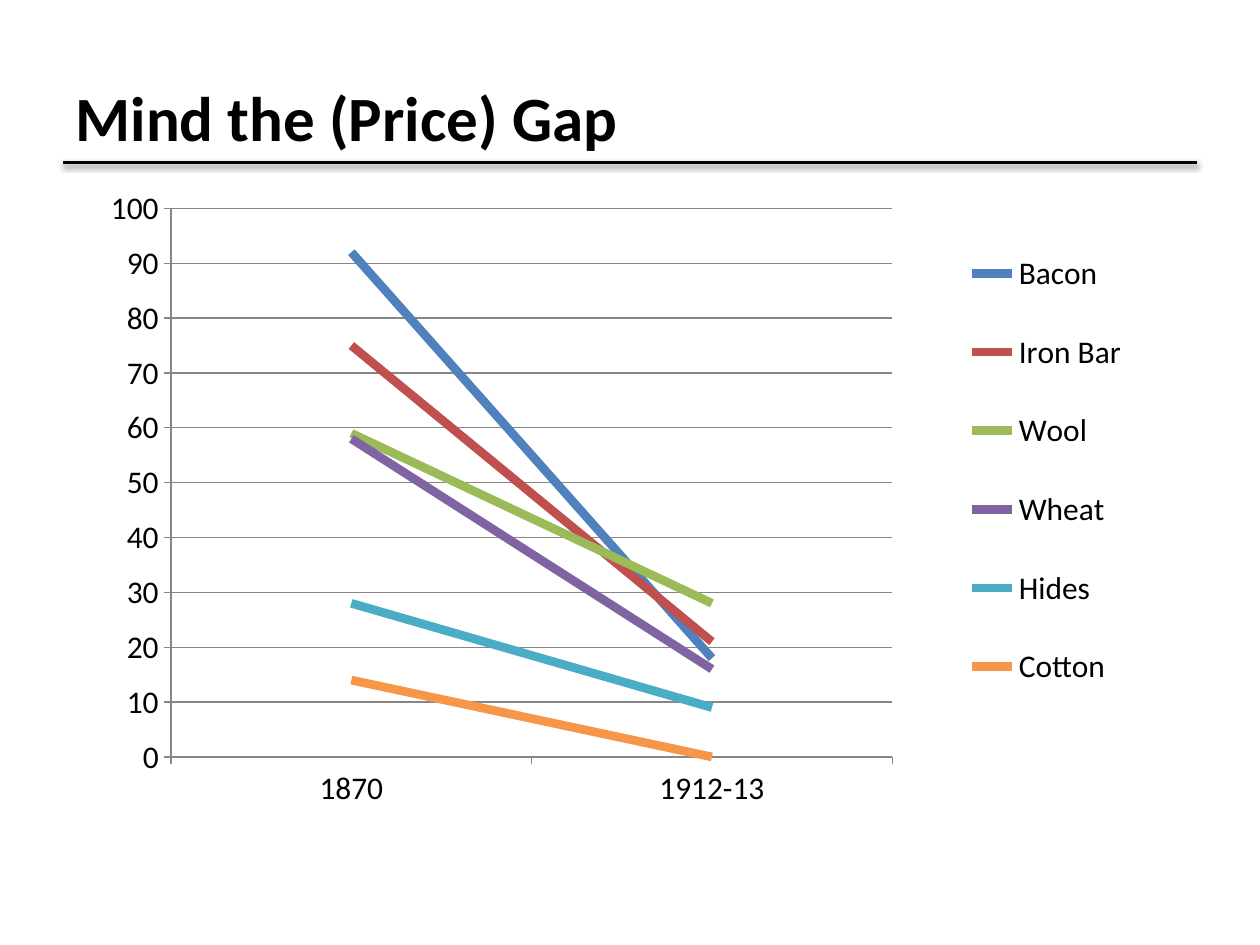
import pptx
import pptx.chart.data
import pptx.dml.color
import pptx.enum.chart
import pptx.enum.shapes
import pptx.enum.text
import pptx.oxml
import pptx.oxml.ns
import pptx.util

TITLE = "Mind the (Price) Gap"
FONT = "Calibri"
BLACK, GREY = "000000", "868686"
WIDTH, HEIGHT = 10, 7.5
MARGIN = 0.05 * WIDTH
RULE_TOP = 1.29
CATEGORIES = ["1870", "1912-13"]
PRICE_GAPS = [
    ("Bacon", (92, 18), "4F81BD"),
    ("Iron Bar", (75, 21), "C0504D"),
    ("Wool ", (59, 28), "9BBB59"),
    ("Wheat ", (58, 16), "8064A2"),
    ("Hides", (28, 9), "4BACC6"),
    ("Cotton", (14, 0), "F79646"),
]
PLOT_AREA = {"x": 0.055, "y": 0.031, "w": 0.696, "h": 0.878}
LEGEND_AREA = {"x": 0.8, "y": 0.04, "w": 0.2, "h": 0.82}


def color(hex_string):
    return pptx.dml.color.RGBColor.from_string(hex_string)


def inches(*lengths):
    return [pptx.util.Inches(length) for length in lengths]


def style_line(line, hex_string, points):
    line.color.rgb = color(hex_string)
    line.width = pptx.util.Pt(points)


def style_font(font, points, bold=False):
    font.name = FONT
    font.size = pptx.util.Pt(points)
    font.bold = bold
    font.color.rgb = color(BLACK)


def set_layout(parent, position, area, target=""):
    for layout in parent.findall(pptx.oxml.ns.qn("c:layout")):
        parent.remove(layout)
    modes = "".join(f'<c:{side}Mode val="edge"/>' for side in "xy")
    shares = "".join(f'<c:{side} val="{share}"/>' for side, share in area.items())
    parent.insert(position, pptx.oxml.parse_xml(
        f'<c:layout {pptx.oxml.ns.nsdecls("c")}><c:manualLayout>'
        f"{target}{modes}{shares}</c:manualLayout></c:layout>"))


def add_title(slide):
    title = slide.shapes.title
    title.left, title.top, title.width, title.height = inches(
        MARGIN, 0.3, WIDTH - 2 * MARGIN, 1.25)
    title.text_frame.text = TITLE
    title.text_frame.vertical_anchor = pptx.enum.text.MSO_ANCHOR.MIDDLE
    paragraph = title.text_frame.paragraphs[0]
    paragraph.alignment = pptx.enum.text.PP_ALIGN.LEFT
    style_font(paragraph.font, 36, bold=True)


def add_rule(slide):
    rule = slide.shapes.add_connector(
        pptx.enum.shapes.MSO_CONNECTOR.STRAIGHT,
        *inches(MARGIN, RULE_TOP, WIDTH - MARGIN, RULE_TOP))
    style_line(rule.line, BLACK, 2)
    rule.element.spPr.append(pptx.oxml.parse_xml(
        f'<a:effectLst {pptx.oxml.ns.nsdecls("a")}>'
        '<a:outerShdw blurRad="40000" dist="20000" dir="5400000" rotWithShape="0">'
        f'<a:srgbClr val="{BLACK}"><a:alpha val="38000"/></a:srgbClr>'
        "</a:outerShdw></a:effectLst>"))


def add_price_chart(slide):
    data = pptx.chart.data.CategoryChartData()
    data.categories = CATEGORIES
    for name, values, _ in PRICE_GAPS:
        data.add_series(name, values)
    chart = slide.shapes.add_chart(
        pptx.enum.chart.XL_CHART_TYPE.LINE, *inches(0.88, 1.5, 8.25, 4.96), data).chart
    style_font(chart.font, 18)
    chart.has_title = False
    chart.plots[0].vary_by_categories = False
    for series, (_, _, hex_string) in zip(chart.plots[0].series, PRICE_GAPS):
        series.smooth = False
        style_line(series.format.line, hex_string, 5)

    for axis in (chart.category_axis, chart.value_axis):
        axis.major_tick_mark = pptx.enum.chart.XL_TICK_MARK.OUTSIDE
        axis.minor_tick_mark = pptx.enum.chart.XL_TICK_MARK.NONE
        style_line(axis.format.line, GREY, 0.75)
    chart.value_axis.minimum_scale = 0
    chart.value_axis.maximum_scale = 100
    chart.value_axis.major_unit = 10
    chart.value_axis.has_major_gridlines = True
    style_line(chart.value_axis.major_gridlines.format.line, GREY, 0.75)

    chart.has_legend = True
    chart.legend.position = pptx.enum.chart.XL_LEGEND_POSITION.RIGHT
    chart.legend.include_in_layout = False
    chart_element = chart.element.find(pptx.oxml.ns.qn("c:chart"))
    set_layout(chart_element.find(pptx.oxml.ns.qn("c:plotArea")), 0, PLOT_AREA,
               '<c:layoutTarget val="inner"/>')
    set_layout(chart_element.find(pptx.oxml.ns.qn("c:legend")), 1, LEGEND_AREA)


def main():
    presentation = pptx.Presentation()
    presentation.slide_width, presentation.slide_height = inches(WIDTH, HEIGHT)
    slide = presentation.slides.add_slide(presentation.slide_layouts[5])
    add_rule(slide)
    add_title(slide)
    add_price_chart(slide)
    presentation.save("out.pptx")


if __name__ == "__main__":
    main()
